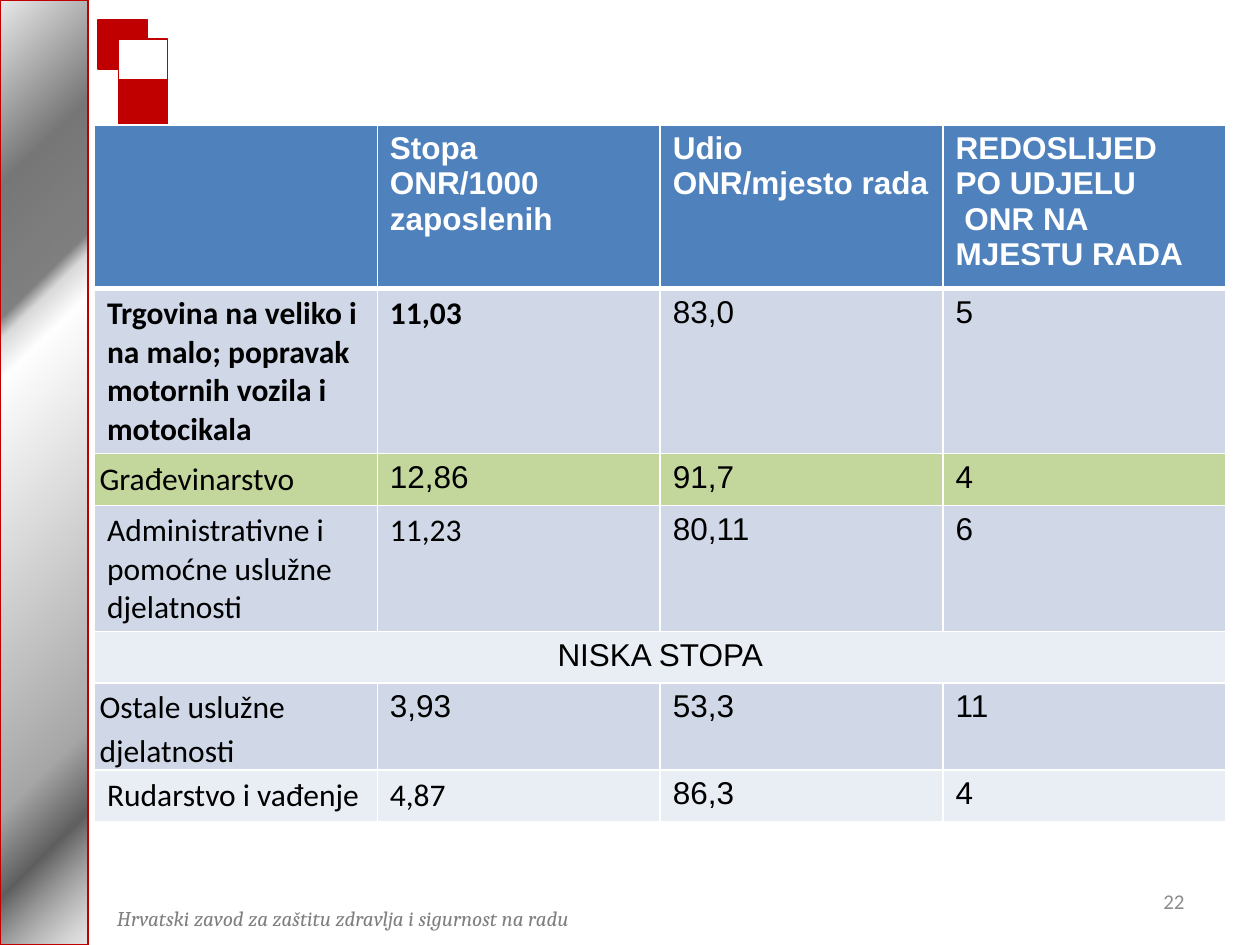
from lxml.etree import SubElement
from pptx import Presentation
from pptx.dml.color import RGBColor
from pptx.enum.shapes import MSO_SHAPE
from pptx.enum.text import MSO_ANCHOR, PP_ALIGN
from pptx.oxml import parse_xml
from pptx.oxml.ns import nsdecls, qn
from pptx.util import Inches, Pt

RED, WHITE, BLACK = "C00000", "FFFFFF", "000000"
HEADER, BAND, GREEN, LIGHT = "4F81BD", "D0D8E8", "C3D69B", "E9EDF4"

# Content: row height, fill, cell texts
ROWS = [
    (1.29, HEADER, ["", "Stopa\nONR/1000 zaposlenih", "Udio ONR/mjesto rada",
                    "REDOSLIJED\nPO UDJELU\n ONR NA MJESTU RADA"]),
    (1.31, BAND, ["Trgovina na veliko i na malo; popravak motornih vozila i motocikala",
                  "11,03", "83,0", "5"]),
    (0.41, GREEN, ["Građevinarstvo", "12,86", "91,7", "4"]),
    (0.99, BAND, ["Administrativne i pomoćne uslužne djelatnosti", "11,23", "80,11", "6"]),
    (0.41, LIGHT, ["NISKA STOPA"]),
    (0.69, BAND, ["Ostale uslužne djelatnosti", "3,93", "53,3", "11"]),
    (0.41, LIGHT, ["Rudarstvo i vađenje", "4,87", "86,3", "4"]),
]
TITLE_ROW, SPAN_ROW = 0, 4
BOLD = {(1, 0), (1, 1)}
CALIBRI_RATES = {(1, 1), (3, 1), (6, 1)}
TIGHT = {(2, 0), (5, 0)}
LOOSE = (5, 0)

# Side band gradient: position %, colour, opacity %
STOPS = [(0, "CBCBCB", 46), (13, "5F5F5F", 100), (21, "A6A6A6", 100), (63, WHITE, 100),
         (67, "D9D9D9", 100), (69, "808080", 100), (82, "777777", 100), (100, "EAEAEA", 100)]
SQUARES = [(0.78, 0.16, RED), (0.94, 0.31, WHITE), (0.94, 0.63, RED)]


def rgb(value):
    return RGBColor.from_string(value)


def style(p, size, font, color, bold=False, italic=False):
    for r in p.runs:
        r.font.size, r.font.name = Pt(size), font
        r.font.bold, r.font.italic = bold, italic
        r.font.color.rgb = rgb(color)


def add_rect(x, y, w, h, fill=None):
    s = slide.shapes.add_shape(MSO_SHAPE.RECTANGLE, Inches(x), Inches(y), Inches(w), Inches(h))
    s.shadow.inherit = False
    s.line.color.rgb, s.line.width = rgb(RED), Pt(1)
    if fill:
        s.fill.solid()
        s.fill.fore_color.rgb = rgb(fill)
    return s


def add_label(x, y, w, h, text, font, color, wrap, italic=False):
    s = slide.shapes.add_textbox(Inches(x), Inches(y), Inches(w), Inches(h))
    tf = s.text_frame
    tf.text, tf.word_wrap = text, wrap
    style(tf.paragraphs[0], 12, font, color, italic=italic)
    return tf


def set_borders(cell, top, bottom):
    tcPr = cell._tc.get_or_add_tcPr()
    for i, (side, width) in enumerate([("L", 1), ("R", 1), ("T", top), ("B", bottom)]):
        tcPr.insert(i, parse_xml(
            f'<a:ln{side} {nsdecls("a")} w="{Pt(width)}"><a:solidFill>'
            f'<a:srgbClr val="{WHITE}"/></a:solidFill></a:ln{side}>'))


prs = Presentation()
prs.slide_width, prs.slide_height = Inches(10), Inches(7.5)
slide = prs.slides.add_slide(prs.slide_layouts[6])

# Side band with a gradient centred on its lower right corner
band = add_rect(0, 0, 0.7, 7.5)
grad = parse_xml(f'<a:gradFill {nsdecls("a")} rotWithShape="1"><a:gsLst/><a:path path="circle">'
                 '<a:fillToRect l="100000" t="100000"/></a:path></a:gradFill>')
for pos, color, opacity in STOPS:
    stop = SubElement(grad[0], qn("a:gs"), pos=str(pos * 1000))
    clr = SubElement(stop, qn("a:srgbClr"), val=color)
    if opacity < 100:
        SubElement(clr, qn("a:alpha"), val=str(opacity * 1000))
band._element.spPr.insert(2, grad)

# Corner squares
for x, y, fill in SQUARES:
    add_rect(x, y, 0.39, 0.39, fill)

# Footer and slide number
add_label(0.83, 7.14, 4.42, 0.3, "Hrvatski zavod za zaštitu zdravlja i sigurnost na radu",
          "Cambria", "808080", False, italic=True)
tf = add_label(7.17, 6.95, 2.33, 0.4, "22", "Calibri", "8C8C8C", True)
tf.vertical_anchor = MSO_ANCHOR.MIDDLE
tf.paragraphs[0].alignment = PP_ALIGN.RIGHT

# Table
total = sum(height for height, _, _ in ROWS)
table = slide.shapes.add_table(len(ROWS), 4, Inches(0.75), Inches(0.99),
                               Inches(8.98), Inches(total)).table
table.first_row = table.horz_banding = False
table.cell(SPAN_ROW, 0).merge(table.cell(SPAN_ROW, 3))
for i, (height, fill, texts) in enumerate(ROWS):
    table.rows[i].height = Inches(height)
    for j in range(4):
        cell = table.cell(i, j)
        cell.fill.solid()
        cell.fill.fore_color.rgb = rgb(fill)
        set_borders(cell, 3 if i == 1 else 1, 3 if i == TITLE_ROW else 1)
        if j >= len(texts):
            continue
        cell.text_frame.text = texts[j]
        if (i, j) in TIGHT:
            cell.vertical_anchor = MSO_ANCHOR.MIDDLE
            cell.margin_left = cell.margin_right = Inches(0.04)
            cell.margin_top = cell.margin_bottom = 0
        named = j == 0 and i != SPAN_ROW
        font = "Calibri" if named or (i, j) in CALIBRI_RATES else "Arial"
        for p in cell.text_frame.paragraphs:
            style(p, 18, font, WHITE if i == TITLE_ROW else BLACK,
                  bold=i == TITLE_ROW or (i, j) in BOLD)
            if i == SPAN_ROW:
                p.alignment = PP_ALIGN.CENTER
            if (i, j) == LOOSE:
                p.line_spacing = 1.15

prs.save("out.pptx")
